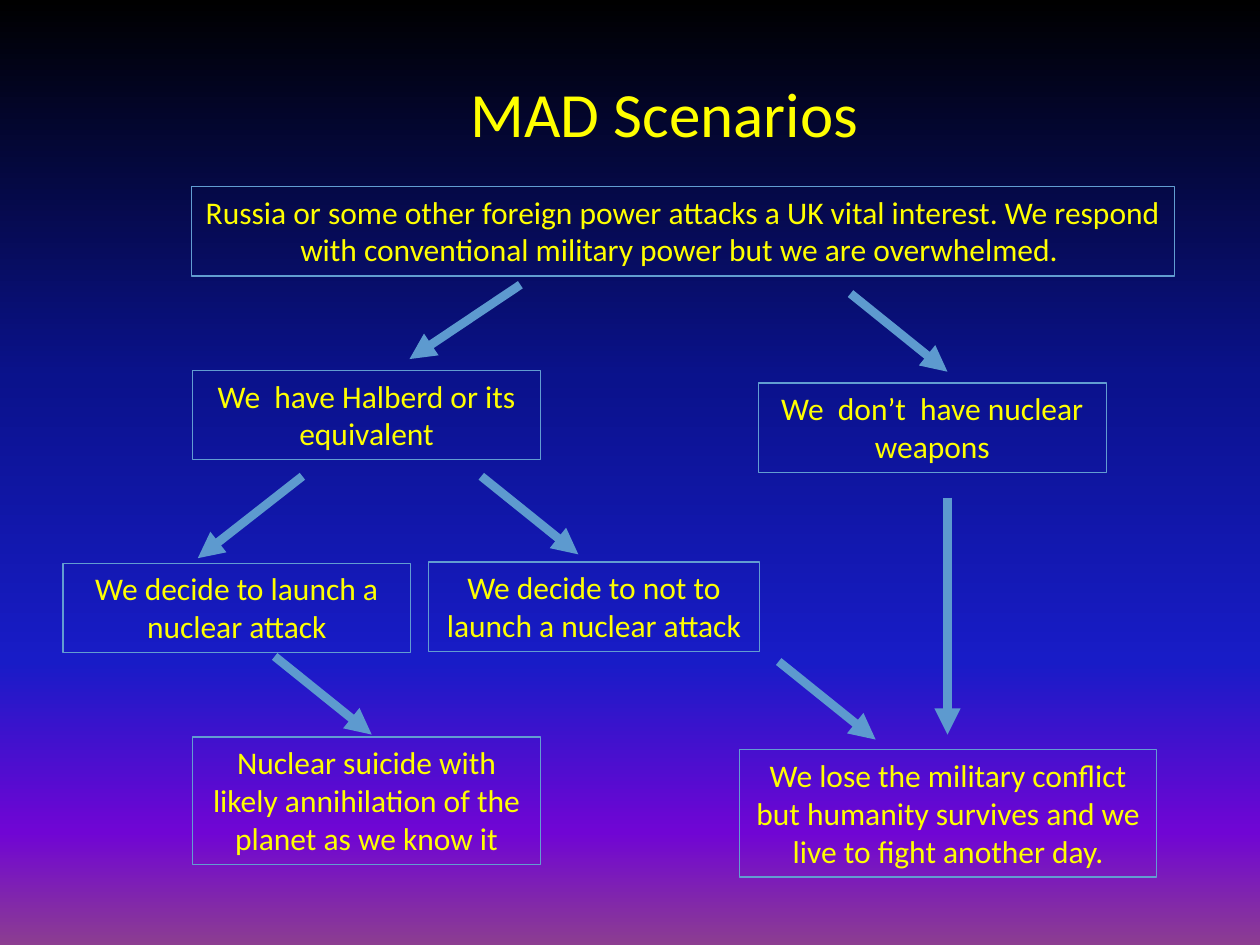
import pptx
import pptx.dml.color
import pptx.enum.shapes
import pptx.enum.text
import pptx.oxml
import pptx.oxml.ns
import pptx.util
from lxml import etree

WIDTH, HEIGHT = 10, 7.5
FONT = "Calibri"
YELLOW, BOX_LINE, ARROW_BLUE = "FFFF00", "629DD1", "5D9ACF"
BACKGROUND_STOPS = [(0, "000000"), (40, "0A128C"), (70, "181CC7"),
                    (88, "7005D4"), (100, "8C3D91")]
TWO_LINES, THREE_LINES = 0.71, 1.01
BOX_WIDTH = 2.76
LEFT_COLUMN = 1.53
SLANT = (0.77, 0.62)  # run and drop shared by the arrows to the right

# left, top, width, height, text
BOXES = [
    (1.52, 1.48, 7.8, TWO_LINES, "Russia or some other foreign power attacks a UK vital "
     "interest. We respond with conventional military power but we are overwhelmed. "),
    (LEFT_COLUMN, 2.94, BOX_WIDTH, TWO_LINES, "We  have Halberd or its equivalent"),
    (6.02, 3.04, BOX_WIDTH, TWO_LINES, "We  don’t  have nuclear weapons"),
    (0.5, 4.47, BOX_WIDTH, TWO_LINES, "We decide to launch a nuclear attack"),
    (3.4, 4.46, 2.63, TWO_LINES, "We decide to not to launch a nuclear attack"),
    (LEFT_COLUMN, 5.85, BOX_WIDTH, THREE_LINES,
     "Nuclear suicide with likely annihilation of the planet as we know it"),
    (5.87, 5.95, 3.31, THREE_LINES, "We lose the military conflict but humanity "
     "survives and we live to fight another day."),
]

# start x, start y, (run, drop)
ARROWS = [
    (4.13, 2.26, (-0.88, 0.59)),
    (2.4, 3.78, (-0.83, 0.65)),
    (3.82, 3.78, SLANT),
    (6.18, 5.25, SLANT),
    (2.18, 5.21, SLANT),
    (7.52, 3.95, (0, 1.88)),
    (6.75, 2.33, SLANT),
]


def color(hex_string):
    return pptx.dml.color.RGBColor.from_string(hex_string)


def inches(*lengths):
    return [pptx.util.Inches(length) for length in lengths]


def set_background(slide, stops):
    """Fill the slide with a gradient that runs from top to bottom."""
    fill = slide.background.fill
    fill.gradient()
    fill.gradient_angle = 270
    qn = pptx.oxml.ns.qn
    stop_list = next(slide.background._cSld.iter(qn("a:gsLst")))
    for old_stop in list(stop_list):
        stop_list.remove(old_stop)
    for percent, hex_string in stops:
        stop = etree.SubElement(stop_list, qn("a:gs"), pos=str(percent * 1000))
        etree.SubElement(stop, qn("a:srgbClr"), val=hex_string)


def write_text(shape, text, size=18, hex_string=YELLOW,
               anchor=pptx.enum.text.MSO_ANCHOR.TOP):
    frame = shape.text_frame
    frame.word_wrap = True
    frame.auto_size = pptx.enum.text.MSO_AUTO_SIZE.SHAPE_TO_FIT_TEXT
    frame.vertical_anchor = anchor
    paragraph = frame.paragraphs[0]
    paragraph.alignment = pptx.enum.text.PP_ALIGN.CENTER
    run = paragraph.add_run()
    run.text = text
    run.font.name = FONT
    run.font.size = pptx.util.Pt(size)
    run.font.color.rgb = color(hex_string)


def place_title(slide, left, top, width, height, text):
    title = slide.shapes.title
    title.left, title.top, title.width, title.height = inches(left, top, width, height)
    write_text(title, text, size=36)


def add_box(slide, left, top, width, height, text):
    box = slide.shapes.add_shape(pptx.enum.shapes.MSO_SHAPE.RECTANGLE,
                                 *inches(left, top, width, height))
    box.shadow.inherit = False
    box.fill.background()
    box.line.color.rgb = color(BOX_LINE)
    box.line.width = pptx.util.Pt(0.75)
    write_text(box, text)


def add_arrow(slide, x, y, offset):
    run, drop = offset
    arrow = slide.shapes.add_connector(pptx.enum.shapes.MSO_CONNECTOR.STRAIGHT,
                                       *inches(x, y, x + run, y + drop))
    arrow.line.color.rgb = color(ARROW_BLUE)
    arrow.line.width = pptx.util.Pt(5)
    qn = pptx.oxml.ns.qn
    etree.SubElement(arrow.line._get_or_add_ln(), qn("a:tailEnd"), type="triangle")
    etree.SubElement(arrow._element.spPr, qn("a:effectLst"))


def main():
    presentation = pptx.Presentation()
    presentation.slide_width, presentation.slide_height = inches(WIDTH, HEIGHT)
    slide = presentation.slides.add_slide(presentation.slide_layouts[5])
    set_background(slide, BACKGROUND_STOPS)
    place_title(slide, 1.97, 0.54, 6.61, 0.71, "MAD Scenarios")
    for box in BOXES:
        add_box(slide, *box)
    for arrow in ARROWS:
        add_arrow(slide, *arrow)
    presentation.save("out.pptx")


if __name__ == "__main__":
    main()
